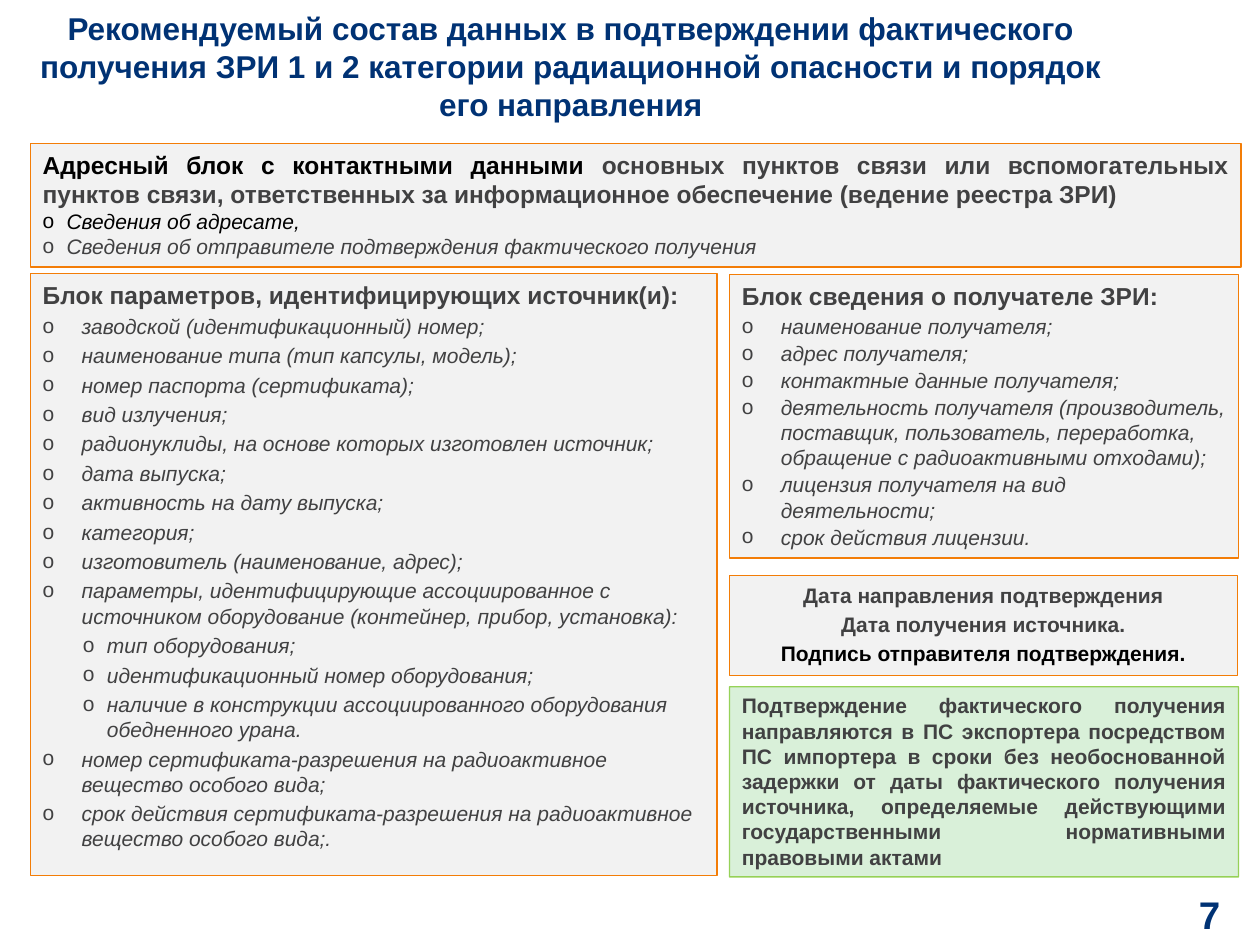
from lxml import etree
from pptx import Presentation
from pptx import util as u
from pptx.dml.color import RGBColor
from pptx.enum import shapes, text
from pptx.oxml.ns import qn

HUES = {"navy": "003274", "grey": "414142", "black": "000000", "pale": "F2F2F2",
        "orange": "F37D07", "green": "5EC25E", "lime": "92D050"}
LEFT, MID = text.PP_ALIGN.LEFT, text.PP_ALIGN.CENTER
JUST = text.PP_ALIGN.JUSTIFY


class Deck:
    font = "Arial"

    def __init__(self):
        self.prs = Presentation()
        self.prs.slide_width, self.prs.slide_height = u.Inches(10), u.Inches(7.5)
        self.slide = self.prs.slides.add_slide(self.prs.slide_layouts[6])

    def hue(self, name):
        return RGBColor.from_string(HUES[name])

    def alpha(self, fill, share):
        """Make a solid fill see-through; share is its opacity in percent."""
        tint = fill.find(".//" + qn("a:srgbClr"))
        etree.SubElement(tint, qn("a:alpha")).set("val", str(share * 1000))

    def label(self, area, words, size):
        """A bold centred text without margins."""
        box = self.slide.shapes.add_textbox(*map(u.Inches, area))
        frame = box.text_frame
        frame.word_wrap = True
        frame.vertical_anchor = text.MSO_ANCHOR.MIDDLE
        frame.margin_left = frame.margin_right = 0
        frame.margin_top = frame.margin_bottom = 0
        self.para(frame, words, size=size, align=MID, hue="navy")

    def panel(self, area, fill="pale", line="orange"):
        """A framed block; returns its text frame."""
        box = self.slide.shapes.add_shape(shapes.MSO_SHAPE.RECTANGLE,
                                          *map(u.Inches, area))
        box.shadow.inherit = False
        box.fill.solid()
        box.fill.fore_color.rgb = self.hue(fill)
        box.line.color.rgb = self.hue(line)
        box.line.width = u.Pt(0.75)
        if fill == "green":
            self.alpha(box.fill._xPr.find(qn("a:solidFill")), 23)
            self.alpha(box.line.fill._xPr.find(qn("a:solidFill")), 94)
        frame = box.text_frame
        frame.word_wrap = True
        frame.vertical_anchor = text.MSO_ANCHOR.TOP
        return frame

    def para(self, frame, words, size=12, align=LEFT, hue="grey", gap=0, item=False):
        """Fill the empty first paragraph, or add one."""
        par = frame.paragraphs[0]
        if par.text:
            par = frame.add_paragraph()
            par.space_before = u.Pt(gap)
        par.text = words
        par.alignment = align
        for run in par.runs:
            self.style(run, size, hue, item)
        return par

    def style(self, run, size, hue, item=False):
        font = run.font
        font.name, font.size = self.font, u.Pt(size)
        font.bold, font.italic = not item, item
        font.color.rgb = self.hue(hue)

    def item(self, frame, words, left=0.31, hang=0.31, **look):
        """An italic line with a hanging round bullet."""
        par = self.para(frame, words, item=True, **look)
        props = par._p.get_or_add_pPr()
        props.set("marL", str(u.Inches(left)))
        props.set("indent", str(-u.Inches(hang)))
        etree.SubElement(props, qn("a:buFont")).set("typeface", self.font)
        etree.SubElement(props, qn("a:buChar")).set("char", "o")


def main():
    deck = Deck()

    # Title and page number
    deck.label((0.28, 0, 8.5, 1.05),
               "Рекомендуемый состав данных в подтверждении фактического получения "
               "ЗРИ 1 и 2 категории радиационной опасности и порядок его направления", 18)
    deck.label((8.46, 7.05, 2.28, 0.41), "7", 22)

    # Address block
    frame = deck.panel((0.24, 1.14, 9.61, 0.98))
    head = deck.para(frame, "Адресный блок с контактными данными ", 14, JUST, "black")
    rest = head.add_run()
    rest.text = ("основных пунктов связи или вспомогательных пунктов связи, "
                 "ответственных за информационное обеспечение (ведение реестра ЗРИ)")
    deck.style(rest, 14, "grey")
    for words, hue in (("Сведения об адресате,", "black"),
                       ("Сведения об отправителе подтверждения фактического получения",
                        "grey")):
        deck.item(frame, words, 0.19, 0.19, align=JUST, hue=hue)

    # Recipient block
    frame = deck.panel((5.79, 2.18, 4.04, 2.25))
    head = deck.para(frame, "Блок сведения о получателе ЗРИ:", 14, JUST)
    head.space_after = u.Pt(1)
    for words in ("наименование получателя;",
                  "адрес получателя;",
                  "контактные данные получателя;",
                  "деятельность получателя (производитель, поставщик, пользователь, "
                  "переработка, обращение с радиоактивными отходами);",
                  "лицензия получателя на вид деятельности;",
                  "срок действия лицензии."):
        deck.item(frame, words, gap=1)

    # Dates and signature
    frame = deck.panel((5.79, 4.57, 4.03, 0.79))
    for words, hue in (("Дата направления подтверждения", "grey"),
                       ("Дата получения источника.", "grey"),
                       ("Подпись отправителя подтверждения.", "black")):
        deck.para(frame, words, align=MID, hue=hue, gap=2.4)

    # Sending rule
    frame = deck.panel((5.79, 5.45, 4.04, 1.51), "green", "lime")
    deck.para(frame, "Подтверждение фактического получения направляются в ПС экспортера "
              "посредством ПС импортера в сроки без необоснованной задержки от даты "
              "фактического получения источника, определяемые действующими "
              "государственными нормативными правовыми актами", align=JUST)

    # Source block: items, gear sub-items, permit items
    frame = deck.panel((0.24, 2.17, 5.45, 4.78))
    deck.para(frame, "Блок параметров, идентифицирующих источник(и):", 14)
    main_items = ("заводской (идентификационный) номер;",
                  "наименование типа (тип капсулы, модель);",
                  "номер паспорта (сертификата);",
                  "вид излучения;",
                  "радионуклиды, на основе которых изготовлен источник;",
                  "дата выпуска;",
                  "активность на дату выпуска;",
                  "категория;",
                  "изготовитель (наименование, адрес);",
                  "параметры, идентифицирующие ассоциированное с источником "
                  "оборудование (контейнер, прибор, установка):")
    gear = ("тип оборудования;",
            "идентификационный номер оборудования;",
            "наличие в конструкции ассоциированного оборудования обедненного урана.")
    permits = ("номер сертификата-разрешения на радиоактивное вещество особого вида;",
               "срок действия сертификата-разрешения на радиоактивное вещество "
               "особого вида;.")
    for group, left, hang in ((main_items, 0.31, 0.31), (gear, 0.51, 0.19),
                              (permits, 0.31, 0.31)):
        for words in group:
            deck.item(frame, words, left, hang, gap=2.4)

    deck.prs.save("out.pptx")


if __name__ == "__main__":
    main()
